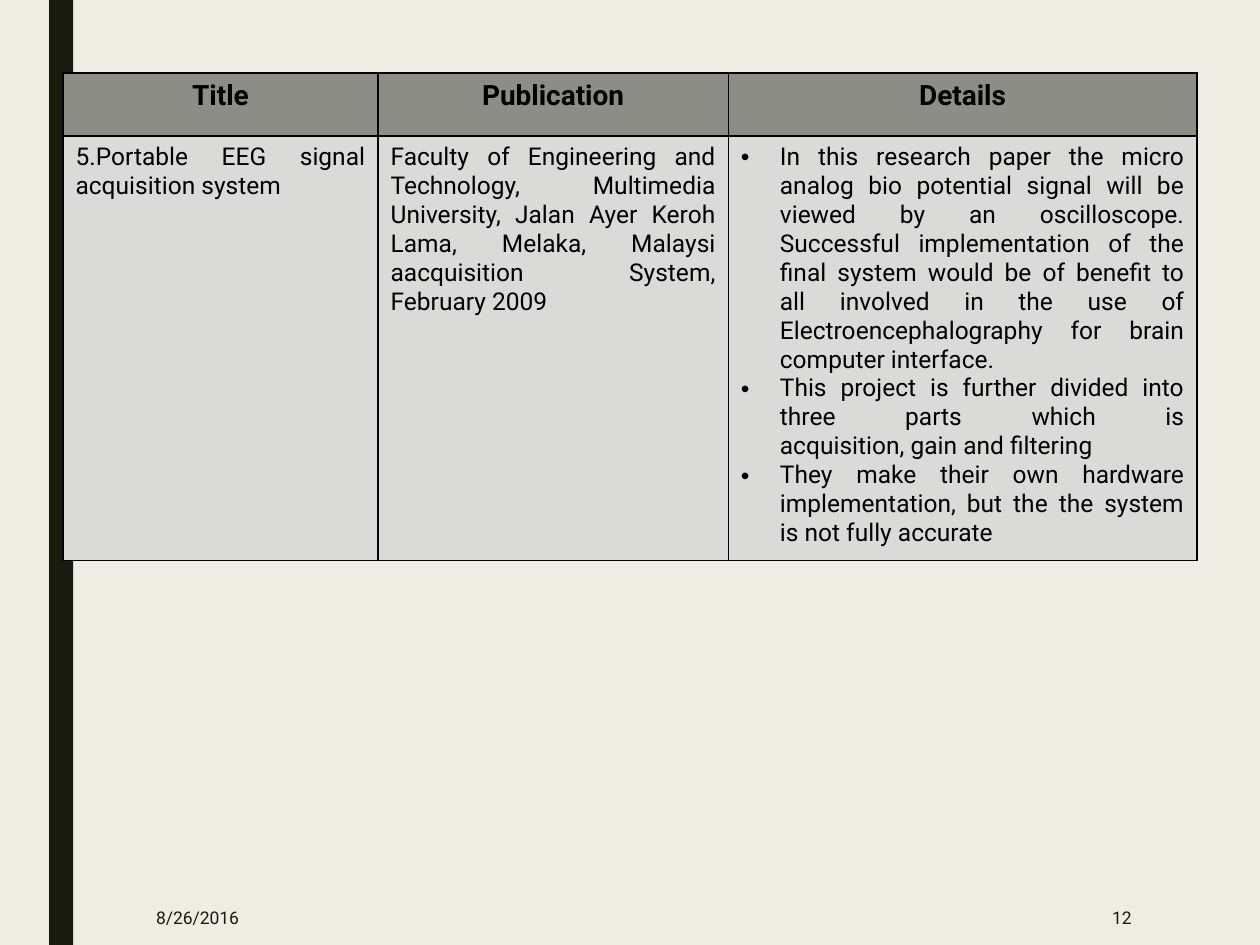
from lxml.etree import SubElement
from pptx import Presentation
from pptx.dml.color import RGBColor
from pptx.enum.shapes import MSO_SHAPE
from pptx.enum.text import MSO_ANCHOR, PP_ALIGN
from pptx.oxml.ns import qn
from pptx.util import Inches, Pt

THEME = {
    "font": "Roboto", "paper": "EFEDE3", "ink": "191B0E", "text": "000000",
    "head_fill": "8C8D86", "body_fill": "DADBD9",
    "head_size": 16, "body_size": 14, "footer_size": 10,
}


def style(p, size, color, align, bold=False):
    p.alignment = align
    for r in p.runs:
        r.font.name, r.font.size, r.font.bold = THEME["font"], Pt(size), bold
        r.font.color.rgb = RGBColor.from_string(color)


def add_borders(cell, color, width):
    tcPr = cell._tc.get_or_add_tcPr()
    for i, side in enumerate(("lnL", "lnR", "lnT", "lnB")):
        ln = SubElement(tcPr, qn(f"a:{side}"), w=str(Pt(width)))
        fill = SubElement(ln, qn("a:solidFill"))
        SubElement(fill, qn("a:srgbClr"), val=color)
        tcPr.insert(i, ln)  # borders come before the cell fill


prs = Presentation()
prs.slide_width, prs.slide_height = Inches(10), Inches(7.5)
W, H = prs.slide_width, prs.slide_height
s = prs.slides.add_slide(prs.slide_layouts[6])
s.background.fill.solid()
s.background.fill.fore_color.rgb = RGBColor.from_string(THEME["paper"])

# Side bar
bar = s.shapes.add_shape(MSO_SHAPE.RECTANGLE, Inches(0.39), 0, Inches(0.19), H)
bar.shadow.inherit = False
bar.fill.solid()
bar.fill.fore_color.rgb = RGBColor.from_string(THEME["ink"])
bar.line.fill.background()

# Footer: date and slide number
footer_h = Inches(0.44)
for text, left, width, align in (
    ("8/26/2016", 1.14, 0.99, PP_ALIGN.LEFT),
    ("12", 7.77, 1.31, PP_ALIGN.RIGHT),
):
    sp = s.shapes.add_textbox(Inches(left), H - footer_h, Inches(width), footer_h)
    tf = sp.text_frame
    tf.word_wrap = True
    tf.vertical_anchor = MSO_ANCHOR.MIDDLE
    tf.text = text
    style(tf.paragraphs[0], THEME["footer_size"], THEME["ink"], align)

# Paper survey table
headers = ["Title", "Publication", "Details"]
paper = [
    "5.Portable EEG signal acquisition system",
    "Faculty of Engineering and Technology, Multimedia University, Jalan Ayer "
    "Keroh Lama, Melaka, Malaysi aacquisition System, February 2009",
]
details = [
    "In this research paper the micro analog bio potential signal will be viewed "
    "by an oscilloscope. Successful implementation of the final system would be of "
    "benefit to all involved in the use of Electroencephalography for brain "
    "computer interface.",
    "This project is further divided into three parts which is\n"
    "acquisition, gain and filtering",
    "They make their own hardware implementation, but the the system is not "
    "fully accurate",
]
col_widths, row_heights = [2.5, 2.78, 3.72], [0.5, 3.31]
table = s.shapes.add_table(2, 3, W // 20, Inches(0.58), W * 9 // 10,
                           Inches(sum(row_heights))).table
for col, width in zip(table.columns, col_widths):
    col.width = Inches(width)
for row, height in zip(table.rows, row_heights):
    row.height = Inches(height)

rows = [
    ([[h] for h in headers], "head", PP_ALIGN.CENTER),
    ([[t] for t in paper] + [details], "body", PP_ALIGN.JUSTIFY),
]
for i, (contents, kind, align) in enumerate(rows):
    for j, lines in enumerate(contents):
        cell = table.cell(i, j)
        cell.fill.solid()
        cell.fill.fore_color.rgb = RGBColor.from_string(THEME[f"{kind}_fill"])
        add_borders(cell, THEME["text"], 1)
        tf = cell.text_frame
        for n, line in enumerate(lines):
            p = tf.add_paragraph() if n else tf.paragraphs[0]
            p.text = line
            style(p, THEME[f"{kind}_size"], THEME["text"], align, kind == "head")
            if lines is details:  # bulleted with a hanging indent
                pPr = p._p.get_or_add_pPr()
                pPr.set("marL", str(Inches(0.31)))
                pPr.set("indent", str(-Inches(0.31)))
                SubElement(pPr, qn("a:buFont"), typeface="Arial")
                SubElement(pPr, qn("a:buChar"), char="•")

prs.save("out.pptx")
